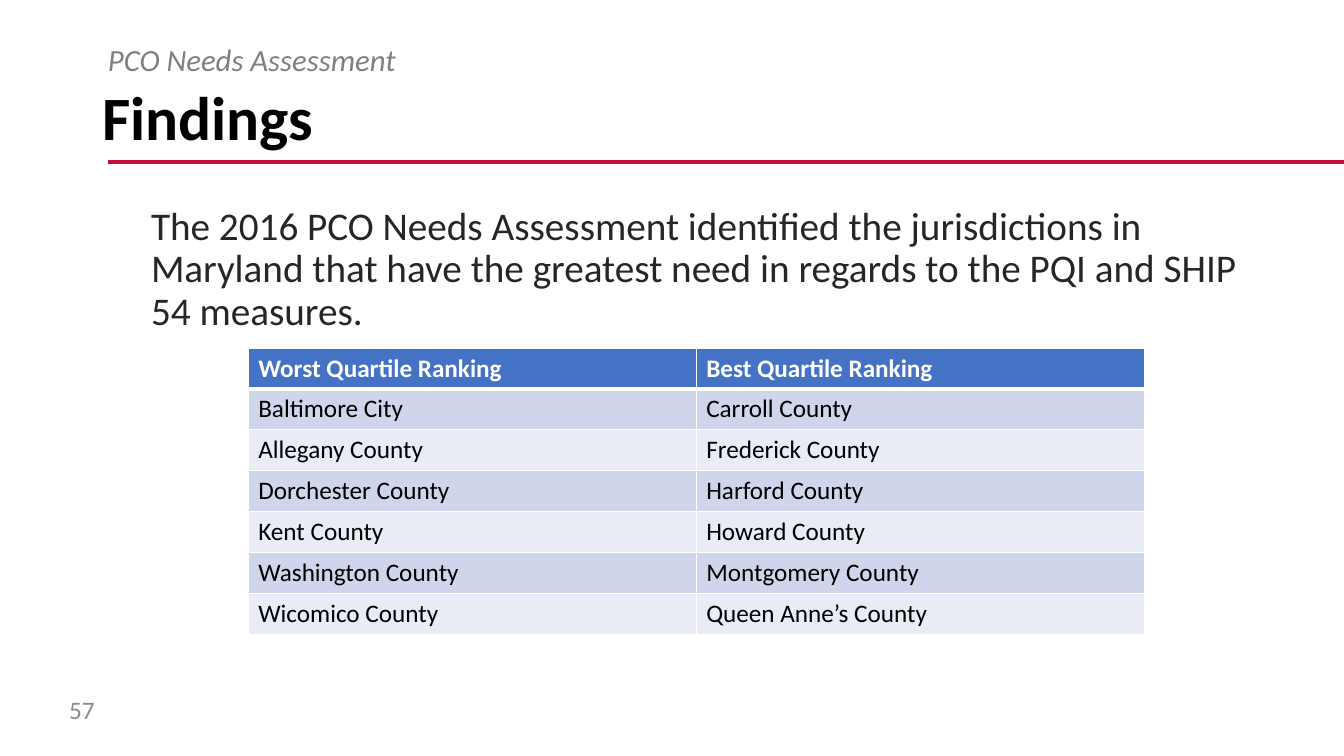
from lxml import etree
from pptx import Presentation
from pptx import util as u
from pptx.dml.color import RGBColor
from pptx.enum import shapes, text
from pptx.oxml.ns import qn

WHITE = RGBColor(0xFF, 0xFF, 0xFF)
BLACK = RGBColor(0x00, 0x00, 0x00)
INK = RGBColor(0x26, 0x26, 0x26)
GRAY = RGBColor(0x80, 0x80, 0x80)
PALE_GRAY = RGBColor(0x8C, 0x8C, 0x8C)
RED = RGBColor(0xC4, 0x0E, 0x3E)
BLUE = RGBColor(0x44, 0x72, 0xC4)
BANDS = (RGBColor(0xE9, 0xEB, 0xF5), RGBColor(0xCF, 0xD5, 0xEA))

RANKINGS = [
    ("Worst Quartile Ranking", "Best Quartile Ranking"),
    ("Baltimore City", "Carroll County"),
    ("Allegany County", "Frederick County"),
    ("Dorchester County", "Harford County"),
    ("Kent County", "Howard County"),
    ("Washington County", "Montgomery County"),
    ("Wicomico County", "Queen Anne’s County"),
]


def write(tf, words, size=18, color=BLACK, bold=False, italic=False, spacing=None):
    p = tf.paragraphs[0]
    p.line_spacing = spacing
    r = p.add_run()
    r.text = words
    r.font.name = "Calibri"
    r.font.size = u.Pt(size)
    r.font.color.rgb = color
    r.font.bold = bold
    r.font.italic = italic


def set_borders(cell, bottom):
    """Draw white cell borders, 1 pt wide except for the bottom one."""
    tcPr = cell._tc.get_or_add_tcPr()
    for i, (side, width) in enumerate(zip("LRTB", (1, 1, 1, bottom))):
        ln = etree.Element(qn(f"a:ln{side}"), w=str(u.Pt(width)))
        fill = etree.SubElement(ln, qn("a:solidFill"))
        etree.SubElement(fill, qn("a:srgbClr"), val=str(WHITE))
        tcPr.insert(i, ln)


class Deck:
    def __init__(self, width, height):
        self.prs = Presentation()
        self.prs.slide_width, self.prs.slide_height = u.Pt(width), u.Pt(height)
        self.s = self.prs.slides.add_slide(self.prs.slide_layouts[6])

    def text(self, words, left, top, width, height,
             anchor=text.MSO_ANCHOR.TOP, **fmt):
        sp = self.s.shapes.add_textbox(*map(u.Pt, (left, top, width, height)))
        tf = sp.text_frame
        tf.word_wrap = True
        tf.vertical_anchor = anchor
        write(tf, words, **fmt)

    def rule(self, left, right, y, color, weight):
        cx = self.s.shapes.add_connector(
            shapes.MSO_CONNECTOR.STRAIGHT, *map(u.Pt, (left, y, right, y)))
        cx.line.color.rgb = color
        cx.line.width = u.Pt(weight)
        etree.SubElement(cx._element.spPr, qn("a:effectLst"))

    def table(self, rows, left, top, col_width, row_height):
        n_rows, n_cols = len(rows), len(rows[0])
        table = self.s.shapes.add_table(n_rows, n_cols, *map(u.Pt, (
            left, top, col_width * n_cols, row_height * n_rows))).table
        for col in table.columns:
            col.width = u.Pt(col_width)
        for i, row in enumerate(rows):
            table.rows[i].height = u.Pt(row_height)
            header = i == 0
            for j, words in enumerate(row):
                cell = table.cell(i, j)
                cell.fill.solid()
                cell.fill.fore_color.rgb = BLUE if header else BANDS[i % 2]
                set_borders(cell, bottom=3 if header else 1)
                write(cell.text_frame, words, bold=header,
                      color=WHITE if header else BLACK)


def main():
    deck = Deck(960, 540)
    middle = text.MSO_ANCHOR.MIDDLE
    deck.rule(77.5, 960, 115.7, RED, 2.25)
    deck.text("Findings", 66, 46.8, 828, 78.5, anchor=middle,
              size=44, bold=True, spacing=0.9)
    deck.text("The 2016 PCO Needs Assessment identified the jurisdictions in "
              "Maryland that have the greatest need in regards to the PQI and "
              "SHIP 54 measures.", 100.8, 144, 792.7, 342.7,
              size=28, color=INK, spacing=0.9)
    deck.text("57", 42.3, 492.5, 42.5, 28.8, anchor=middle, color=PALE_GRAY)
    deck.text("PCO Needs Assessment", 70, 28.8, 824.4, 27.4,
              size=22, color=GRAY, italic=True, spacing=0.9)
    deck.table(RANKINGS, 177.3, 248.6, 320, 29.2)
    deck.prs.save("out.pptx")


if __name__ == "__main__":
    main()
